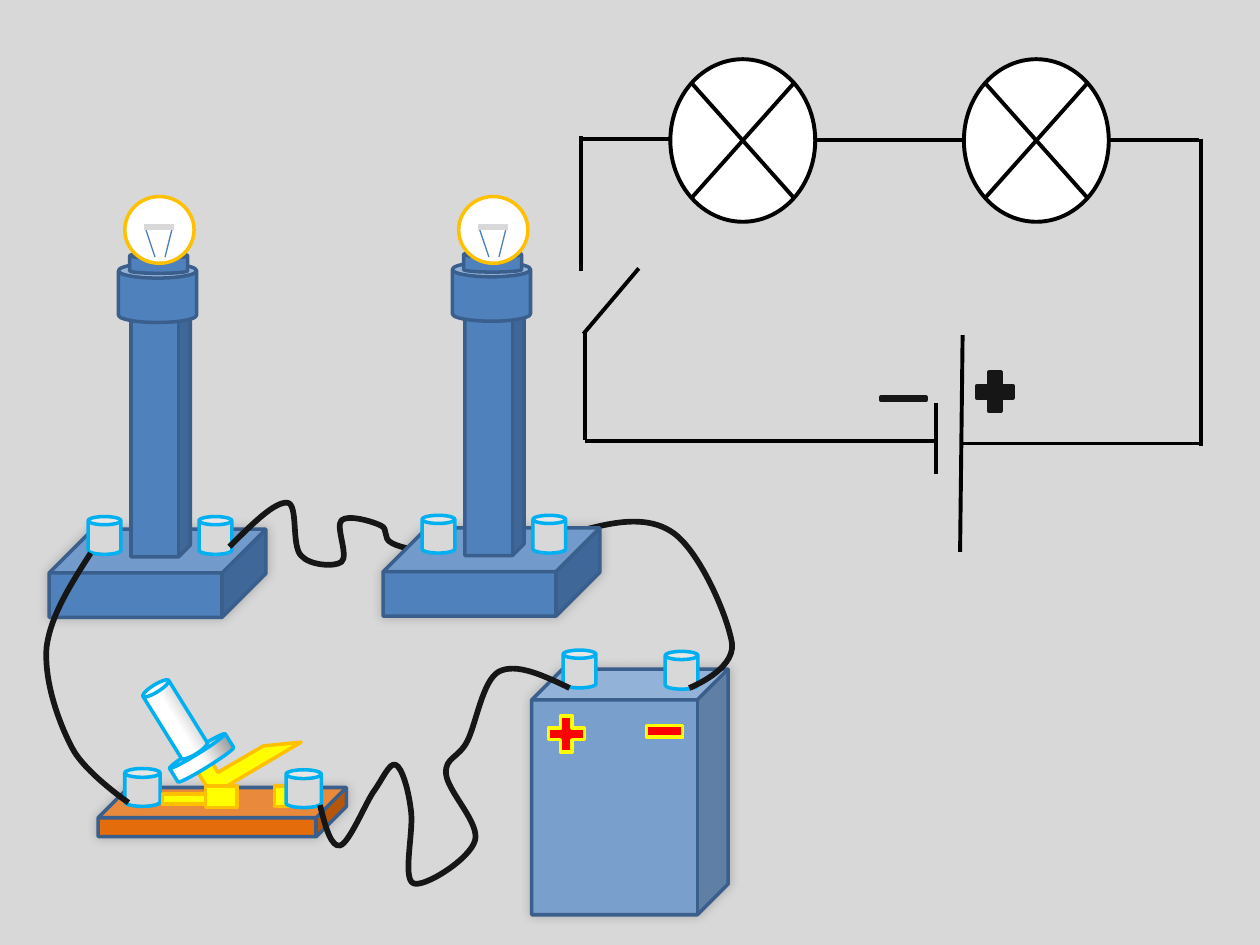
from dataclasses import dataclass
from lxml.etree import SubElement
from pptx import Presentation
from pptx.dml.color import RGBColor
from pptx.enum.shapes import MSO_CONNECTOR, MSO_SHAPE
from pptx.oxml.ns import qn
from pptx.util import Cm, Pt


@dataclass(frozen=True)
class Theme:
    """Colours and line widths of the slide."""
    back: str = "D8D8D8"
    blue: str = "4F81BD"
    battery: str = "799FCD"
    edge: str = "3A5F8C"
    cyan: str = "00B0F0"
    filament: str = "4B7EBC"
    orange: str = "E46C0A"
    yellow: str = "FFFF00"
    gold: str = "FFC000"
    red: str = "FF0000"
    white: str = "FFFFFF"
    grey: str = "808080"
    dark: str = "161616"
    black: str = "000000"
    thin: float = 0.75
    outline: float = 2
    circuit: float = 2.25
    wire: float = 3.25
    bar: float = 3.5


T = Theme()
WIRES = {
    "lamp_switch": [(0.72, 4.39), (0.56, 4.64), (0.4, 4.89), (0.37, 5.14),
                    (0.35, 5.4), (0.46, 5.72), (0.57, 5.93),
                    (0.67, 6.13), (1.02, 6.37), (1.02, 6.37)],
    "lamp_lamp": [(1.82, 4.34), (2, 4.16), (2.18, 3.98), (2.28, 3.99),
                  (2.37, 4), (2.31, 4.33), (2.39, 4.41),
                  (2.46, 4.49), (2.66, 4.5), (2.71, 4.46),
                  (2.77, 4.41), (2.66, 4.18), (2.71, 4.13),
                  (2.76, 4.08), (2.96, 4.14), (3.02, 4.17),
                  (3.09, 4.2), (3.03, 4.27), (3.11, 4.31),
                  (3.18, 4.35), (3.33, 4.37), (3.47, 4.4)],
    "switch_battery": [(2.54, 6.39), (2.58, 6.56), (2.63, 6.73), (2.7, 6.71),
                       (2.77, 6.69), (2.89, 6.4), (2.96, 6.29),
                       (3.04, 6.18), (3.09, 6.05), (3.14, 6.07),
                       (3.19, 6.09), (3.24, 6.26), (3.26, 6.42),
                       (3.29, 6.58), (3.19, 6.97), (3.28, 7.01),
                       (3.36, 7.05), (3.73, 6.82), (3.77, 6.67),
                       (3.81, 6.53), (3.55, 6.28), (3.54, 6.14),
                       (3.53, 6.01), (3.64, 6.02), (3.71, 5.88),
                       (3.78, 5.74), (3.83, 5.4), (3.96, 5.33),
                       (4.1, 5.26), (4.31, 5.36), (4.52, 5.46)],
    "lamp_battery": [(4.48, 4.25), (4.79, 4.16), (5.1, 4.07), (5.33, 4.22),
                     (5.55, 4.36), (5.78, 4.9), (5.81, 5.11),
                     (5.83, 5.32), (5.47, 5.46), (5.47, 5.46)],
}


def inch(value):
    """Return a length in inches as a Cm length."""
    return Cm(value * 2.54)


def rgb(colour):
    """Return the colour object for a hex string."""
    return RGBColor.from_string(colour)


def style(sp, fill, line, width):
    """Set fill and outline and remove the shadow."""
    if fill:
        sp.fill.solid()
        sp.fill.fore_color.rgb = rgb(fill)
    else:
        sp.fill.background()
    sp.line.color.rgb = rgb(line)
    sp.line.width = Pt(width)
    sp.shadow.inherit = False


def add_box(shapes, kind, x, y, w, h, fill, line, width=T.outline, adj=None, angle=0):
    """Add a preset shape."""
    sp = shapes.add_shape(kind, inch(x), inch(y), inch(w), inch(h))
    style(sp, fill, line, width)
    sp.rotation = angle
    if adj is not None:
        sp.adjustments[0] = adj
    return sp


def add_glow(sp):
    """Give a shape a soft, faint shadow."""
    effects = sp._element.spPr.find(qn("a:effectLst"))
    shadow = SubElement(effects, qn("a:outerShdw"), blurRad=str(Pt(6)),
                        dist="0", dir="18900000", rotWithShape="0")
    colour = SubElement(shadow, qn("a:srgbClr"), val=T.black)
    SubElement(colour, qn("a:alpha"), val="20000")


def add_line(shapes, x1, y1, x2, y2, colour=T.black, width=T.circuit):
    """Add a straight connector."""
    cx = shapes.add_connector(MSO_CONNECTOR.STRAIGHT,
                              inch(x1), inch(y1), inch(x2), inch(y2))
    cx.line.color.rgb = rgb(colour)
    cx.line.width = Pt(width)
    SubElement(cx._element.spPr, qn("a:effectLst"))


def add_outline(shapes, points, closed, fill, line, width):
    """Add a freeform through the given points."""
    pts = [(inch(x), inch(y)) for x, y in points]
    builder = shapes.build_freeform(*pts[0])
    builder.add_line_segments(pts[1:], close=closed)
    sp = builder.convert_to_shape()
    style(sp, fill, line, width)
    return sp


def add_wire(shapes, points):
    """Add a curve from a start point and triples of Bezier points."""
    sp = add_outline(shapes, points, False, None, T.dark, T.wire)
    path = next(sp._element.iter(qn("a:path")))
    segments = path.findall(qn("a:lnTo"))
    for i in range(0, len(segments), 3):
        curve = SubElement(path, qn("a:cubicBezTo"))
        for segment in segments[i:i + 3]:
            curve.append(segment[0])
            path.remove(segment)


def add_terminal(shapes, x, y, w=0.26):
    """Add a connection post."""
    add_box(shapes, MSO_SHAPE.CAN, x, y, w, 0.3, T.back, T.cyan)


def add_battery(shapes):
    """Draw the battery with its poles."""
    add_glow(add_box(shapes, MSO_SHAPE.CUBE, 4.22, 5.31, 1.56, 1.95,
                     T.battery, T.edge, adj=0.157))
    add_terminal(shapes, 4.47, 5.16)
    add_box(shapes, MSO_SHAPE.MATH_PLUS, 4.3, 5.63, 0.39, 0.39, T.red, T.yellow)
    add_box(shapes, MSO_SHAPE.MATH_MINUS, 5.08, 5.61, 0.39, 0.39, T.red, T.yellow)
    add_terminal(shapes, 5.28, 5.17)


def add_lamp(shapes, x, y):
    """Draw a lamp on its stand, with the base at x, y."""
    add_glow(add_box(shapes, MSO_SHAPE.CUBE, x, y, 1.72, 0.7, T.blue, T.edge, adj=0.497))
    add_box(shapes, MSO_SHAPE.CUBE, x + 0.65, y - 1.81, 0.47, 2.03,
            T.blue, T.edge, adj=0.199)
    for dx in (1.19, 0.31):
        add_terminal(shapes, x + dx, y - 0.1)
    add_box(shapes, MSO_SHAPE.CAN, x + 0.55, y - 2.11, 0.62, 0.47, T.blue, T.edge)
    add_box(shapes, MSO_SHAPE.CAN, x + 0.64, y - 2.19, 0.46, 0.16, T.blue, T.edge)
    add_box(shapes, MSO_SHAPE.OVAL, x + 0.6, 1.56, 0.55, 0.53, T.white, T.gold)
    for top, bottom in ((0.76, 0.84), (0.98, 0.92)):
        add_line(shapes, x + top, 1.8, x + bottom, 2.04, T.filament, T.thin)
    add_line(shapes, x + 0.75, 1.8, x + 0.99, 1.8, T.back, T.bar)


def add_switch(shapes):
    """Draw the open knife switch."""
    add_glow(add_box(shapes, MSO_SHAPE.CUBE, 0.78, 6.25, 1.97, 0.39,
                     T.orange, T.edge, adj=0.616))
    add_terminal(shapes, 0.99, 6.1, 0.28)
    lever = [(1.68, 6.31), (1.48, 5.98), (1.63, 5.96), (1.73, 6.13),
             (2.09, 5.92), (2.39, 5.89)]
    add_outline(shapes, lever, True, T.yellow, T.gold, T.outline)
    for x, y, w, h in ((1.34, 5.93, 0.52, 0.17), (1.27, 5.39, 0.24, 0.64)):
        sp = add_box(shapes, MSO_SHAPE.CAN, x, y, w, h, T.white, T.cyan, angle=328.2)
        sp.fill.gradient()
        sp.fill.gradient_angle = 0
        for stop, place, colour in zip(sp.fill.gradient_stops, (0.5, 1), (T.white, T.grey)):
            stop.position = place
            stop.color.rgb = rgb(colour)
    for x, y, w, h in ((1.29, 6.3, 0.49, 0.08), (1.63, 6.24, 0.25, 0.17),
                       (2.18, 6.24, 0.25, 0.16)):
        add_box(shapes, MSO_SHAPE.RECTANGLE, x, y, w, h, T.yellow, T.gold)
    add_terminal(shapes, 2.27, 6.11, 0.28)


def add_circuit(shapes):
    """Draw the circuit diagram."""
    for x in (7.65, 5.32):
        add_box(shapes, MSO_SHAPE.FLOWCHART_SUMMING_JUNCTION, x, 0.47, 1.15, 1.29,
                T.white, T.black, T.circuit)
    for ends in ((4.64, 3.49, 4.64, 2.63), (4.63, 2.65, 5.07, 2.13),
                 (6.47, 1.11, 7.65, 1.11), (8.81, 1.11, 9.52, 1.11),
                 (9.53, 1.1, 9.53, 3.54), (9.53, 3.52, 7.64, 3.52),
                 (7.64, 2.66, 7.62, 4.38), (7.43, 3.2, 7.43, 3.76),
                 (7.43, 3.5, 4.64, 3.5), (4.61, 1.1, 5.32, 1.1),
                 (4.61, 2.15, 4.61, 1.08)):
        add_line(shapes, *ends)
    add_box(shapes, MSO_SHAPE.MATH_PLUS, 7.7, 2.9, 0.39, 0.42, T.dark, T.dark, T.circuit)
    add_box(shapes, MSO_SHAPE.MATH_MINUS, 6.93, 3.11, 0.48, 0.11, T.dark, T.dark, T.circuit)


def main():
    """Build the slide and save it."""
    prs = Presentation()
    prs.slide_width, prs.slide_height = Cm(25.4), Cm(19.05)
    s = prs.slides.add_slide(prs.slide_layouts[6])
    s.background.fill.solid()
    s.background.fill.fore_color.rgb = rgb(T.back)
    add_battery(s.shapes.add_group_shape().shapes)
    add_lamp(s.shapes.add_group_shape().shapes, 0.39, 4.2)
    add_switch(s.shapes.add_group_shape().shapes)
    for points in WIRES.values():
        add_wire(s.shapes, points)
    add_lamp(s.shapes.add_group_shape().shapes, 3.04, 4.19)
    add_circuit(s.shapes.add_group_shape().shapes)
    prs.save("out.pptx")


if __name__ == "__main__":
    main()
